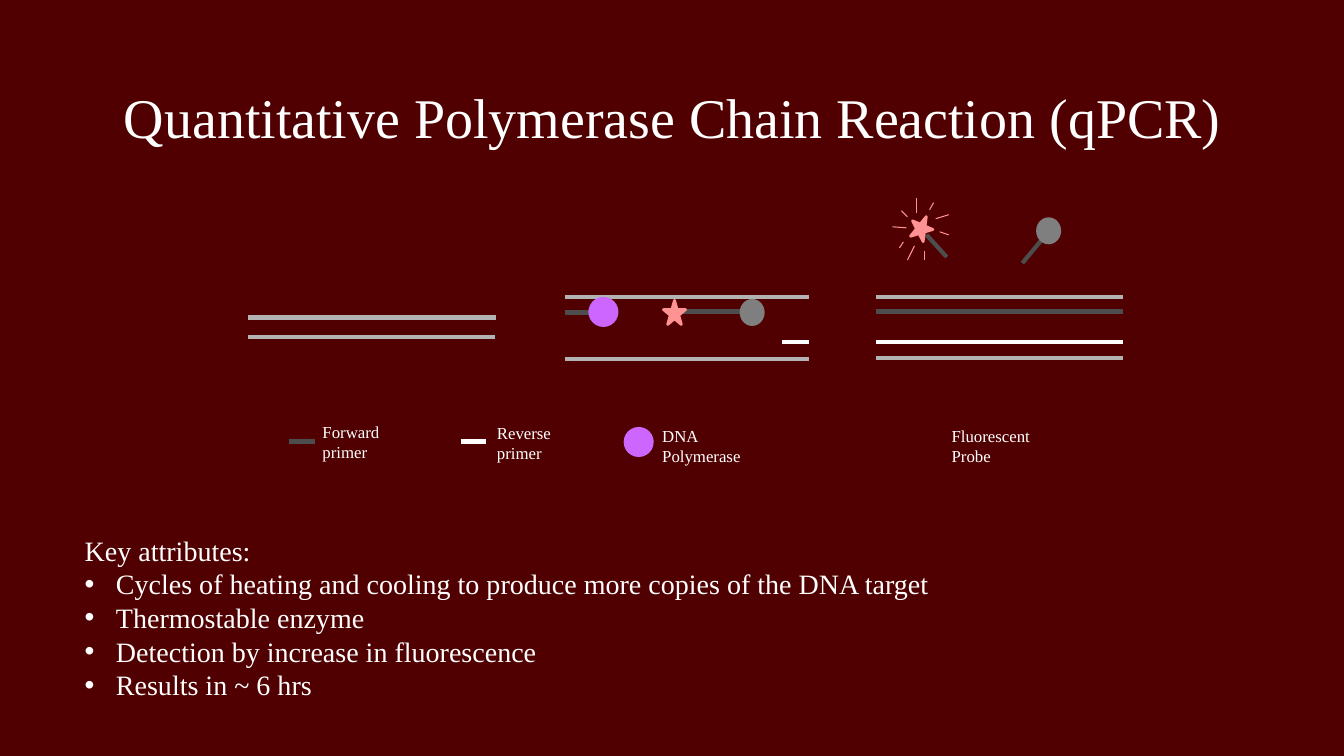
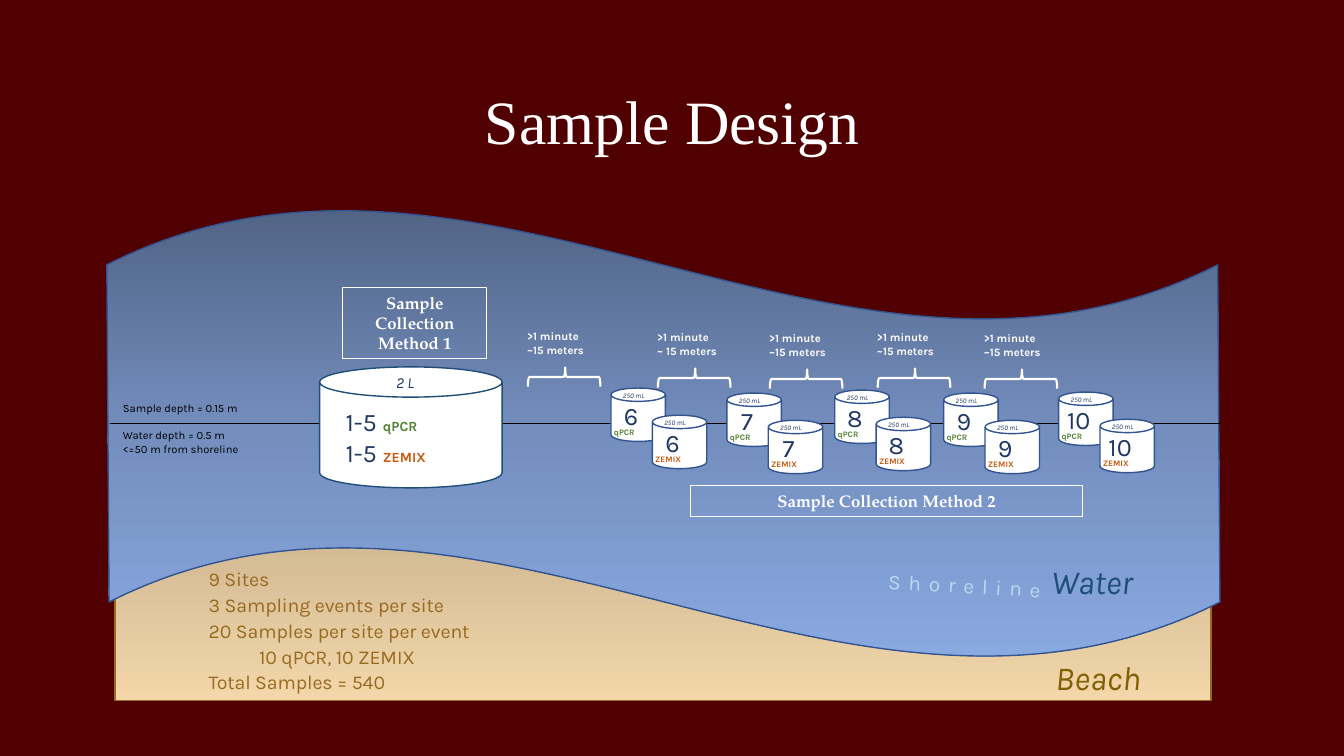
"""Build two slides on qPCR and on the design of water sampling."""
import copy

import pptx
import pptx.dml.color
import pptx.enum.shapes
import pptx.enum.text
import pptx.oxml.ns
import pptx.util
from lxml import etree

COLORS = {
    "maroon": "500000", "white": "FFFFFF", "black": "000000",
    "strand": "B3B3B3", "primer": "4D4D4D", "quencher": "7F7F7F",
    "enzyme": "CC66FF", "glow": "FF9393", "navy": "203864", "blue": "1F4E79",
    "edge": "325491", "green": "548235", "orange": "C55A11",
    "sand": "986A20", "olive": "806000", "shoreline": "BDD7EE",
}
BEACH_GRADIENT = ["907F65", "CDB590", "F3D7AA"]
WATER_GRADIENT = ["516486", "748EBE", "89A9E1"]
SERIF, SANS, BOOK = "Times New Roman", "Karla", "TeX Gyre Pagella"
SHAPES = pptx.enum.shapes.MSO_SHAPE
ALIGN = pptx.enum.text.PP_ALIGN
ANCHOR = pptx.enum.text.MSO_ANCHOR
qn = pptx.oxml.ns.qn

presentation = pptx.Presentation()
presentation.slide_width = pptx.util.Inches(13.33)
presentation.slide_height = pptx.util.Inches(7.5)
CELL = presentation.slide_height / 75


def write(shape, text, size=12, font=SERIF, color="white", bold=False, italic=False,
          align=ALIGN.LEFT, anchor=ANCHOR.TOP, indent=0, bullet=None, leading=None,
          before=0, spacing=0, join=False):
    """Add a paragraph to a shape, or a run to its last paragraph."""
    frame = shape.text_frame
    frame.word_wrap = True
    frame.auto_size = pptx.enum.text.MSO_AUTO_SIZE.NONE
    frame.vertical_anchor = anchor
    fresh = frame.text and not join
    paragraph = frame.add_paragraph() if fresh else frame.paragraphs[-1]
    if not join:
        paragraph.alignment = align
        paragraph.line_spacing = leading
        paragraph.space_before = pptx.util.Pt(before)
        properties = paragraph._p.get_or_add_pPr()
        properties.set("marL", str(int(indent * CELL)))
        properties.set("indent", str(int(-indent * CELL) if bullet else 0))
        mark = etree.SubElement(properties, qn("a:buChar" if bullet else "a:buNone"))
        if bullet:
            mark.set("char", bullet)
    run = paragraph.add_run()
    run.text = text
    run.font.name, run.font.size = font, pptx.util.Pt(size)
    run.font.bold, run.font.italic = bold, italic
    run.font.color.rgb = pptx.dml.color.RGBColor.from_string(COLORS[color])
    if spacing:
        run._r.get_or_add_rPr().set("spc", str(round(spacing * 100)))


def draw(slide, kind, box, fill=None, line=None, weight=1, rotation=0, adjust=()):
    """Draw a line, text box or preset shape whose box is given in grid cells."""
    lengths = [int(value * CELL) for value in box]
    if kind == "text":
        shape = slide.shapes.add_textbox(*lengths)
    elif kind == "line":
        shape = slide.shapes.add_connector(
            pptx.enum.shapes.MSO_CONNECTOR.STRAIGHT, *lengths)
    else:
        shape = slide.shapes.add_shape(kind, *lengths)
        shape.shadow.inherit = False
        for index, value in enumerate(adjust):
            shape.adjustments[index] = value
        if isinstance(fill, list):
            shape.fill.gradient()
            shape.fill.gradient_angle = 270
            first = shape.element.spPr.find(".//" + qn("a:gs"))
            first.addnext(copy.deepcopy(first))
            for index, stop in enumerate(shape.fill.gradient_stops):
                stop.position = index / 2
                stop.color.rgb = pptx.dml.color.RGBColor.from_string(fill[index])
        elif fill:
            shape.fill.solid()
            shape.fill.fore_color.rgb = pptx.dml.color.RGBColor.from_string(COLORS[fill])
        else:
            shape.fill.background()
    if line:
        shape.line.color.rgb = pptx.dml.color.RGBColor.from_string(COLORS[line])
        shape.line.width = pptx.util.Pt(weight)
    if kind == "line":
        etree.SubElement(shape.element.spPr, qn("a:effectLst"))
    elif rotation:
        shape.rotation = rotation
    return shape


background = presentation.slide_master.background.fill
background.solid()
background.fore_color.rgb = pptx.dml.color.RGBColor.from_string(COLORS["maroon"])

slides = []
for heading, size, body_box in [
    ("Quantitative Polymerase Chain Reaction (qPCR)", 40, (7.4, 52.4, 108.2, 17.8)),
    ("Sample Design", 44, (17.2, 55.5, 48.2, 13.8)),
]:
    slide = presentation.slides.add_slide(presentation.slide_layouts[1])
    title, body = slide.placeholders
    for placeholder, box in [(title, (6.4, 7.7, 120.6, 13)), (body, body_box)]:
        (placeholder.left, placeholder.top,
         placeholder.width, placeholder.height) = [int(value * CELL) for value in box]
    write(title, heading, size=size, align=ALIGN.CENTER)
    slides.append((slide, body))

reaction, attributes = slides[0]
write(attributes, "Key attributes:", size=20)
for attribute in [
    "Cycles of heating and cooling to produce more copies of the DNA target",
    "Thermostable enzyme",
    "Detection by increase in fluorescence",
    "Results in ~ 6 hrs",
]:
    write(attributes, attribute, size=20, indent=3.1, bullet="•")

for left, right, row, color in [
    (24.6, 49.2, 31.5, "strand"), (24.6, 49.1, 33.4, "strand"),
    (56, 80.2, 29.5, "strand"), (56, 80.2, 35.6, "strand"),
    (56, 58.5, 31, "primer"), (77.6, 80.2, 33.9, "white"),
    (67.2, 74.2, 30.9, "primer"),
    (86.9, 111.4, 29.5, "strand"), (86.9, 111.4, 35.5, "strand"),
    (86.9, 111.4, 30.9, "primer"), (86.9, 111.4, 33.9, "white"),
    (28.7, 31.2, 43.8, "primer"), (45.7, 48.2, 43.8, "white"),
]:
    draw(reaction, "line", (left, row, right, row), line=color, weight=3)

for probe_half in [(103.4, 23.7, 101.4, 26.1), (91.9, 23.3, 93.9, 25.5)]:
    draw(reaction, "line", probe_half, line="primer", weight=3)

for left, top in [(58.5, 29.6), (62, 42.5)]:
    draw(reaction, SHAPES.OVAL, (left, top, 2.7, 2.7), "enzyme", "enzyme", 2)
for left, top in [(73.5, 29.8), (102.9, 21.7)]:
    draw(reaction, SHAPES.OVAL, (left, top, 2.2, 2.4), "quencher", "quencher", 2)
for left, top, rotation in [(65.8, 29.8, 0), (90.3, 21.4, 23)]:
    draw(reaction, SHAPES.STAR_5_POINT, (left, top, 2.2, 2.4), "glow", "glow", 2, rotation)

for ray in [
    (92.2, 20.8, 92.6, 20.1), (93.2, 23, 94.1, 23.3), (91.7, 25.8, 91.7, 24.9),
    (89.2, 24.6, 89.6, 24), (89.4, 20.9, 90, 21.5), (90.9, 19.6, 90.9, 21.1),
    (94.1, 21.3, 92.8, 21.7), (90.7, 24.4, 90, 25.8), (89.9, 22.6, 88.5, 22.5),
]:
    draw(reaction, "line", ray, line="glow", weight=0.75)

for label, left, top, width in [
    ("Forward primer", 31, 41.3, 11.9), ("Reverse primer", 48.3, 41.4, 11.9),
    ("DNA Polymerase", 64.7, 41.7, 13.4), ("Fluorescent Probe", 93.4, 41.7, 13.4),
]:
    write(draw(reaction, "text", (left, top, width, 5)), label)

sampling, totals = slides[1]
draw(sampling, SHAPES.RECTANGLE, (11.4, 33.1, 108.7, 36.4), BEACH_GRADIENT, "sand")
draw(sampling, SHAPES.WAVE, (10.6, 20.7, 110.4, 44.6), WATER_GRADIENT, "edge",
     adjust=(0.125, 0.001))
draw(sampling, "line", (10.9, 42, 121.1, 42), line="black")

depths = draw(sampling, "text", (11.2, 39.3, 20.7, 6))
for text, before in [("Sample depth = 0.15 m", 0), ("Water depth = 0.5 m", 10),
                     ("<=50 m from shoreline", 0)]:
    write(depths, text, size=8, font=SANS, color="black", before=before)

METHODS = [("qPCR", "green"), ("ZEMIX", "orange")]
draw(sampling, SHAPES.CAN, (31.7, 36.4, 18.1, 12), "white", "blue")
write(draw(sampling, "text", (38.3, 36.5, 5.8, 2.9)), "2 L",
      size=11, font=SANS, color="navy", italic=True)
for index, (method, color) in enumerate(METHODS):
    label = draw(sampling, "text", (33.3, 39.8 + 3.1 * index, 15.9, 4))
    write(label, "1-5 ", size=18, font=SANS, color="navy")
    write(label, method, size=10, font=SANS, color=color, bold=True, join=True)

for number, column, row in [(6, 60.6, 38.5), (7, 72.1, 39), (8, 82.8, 38.7),
                            (9, 93.6, 39), (10, 105, 38.9)]:
    for index, (method, color) in enumerate(METHODS):
        left, top = column + 4.1 * index, row + 2.7 * index
        draw(sampling, SHAPES.CAN, (left, top, 5.4, 5.3), "white", "edge")
        write(draw(sampling, "text", (left - 1.5, top + 0.7, 7, 4)), str(number),
              size=18, font=SANS, color="navy", align=ALIGN.CENTER)
        write(draw(sampling, "text", (left - 0.7, top + 3.4, 6.2, 2)), method,
              size=6, font=SANS, color=color, bold=True)
        write(draw(sampling, "text", (left + 0.2, top - 0.2, 6.2, 1.9)), "250 mL",
              size=5, font=SANS, color="navy", italic=True)

for left, top, distance in [
    (55, 33.8, "~15 meters"), (67.9, 33.9, "~ 15 meters"), (79, 34, "~15 meters"),
    (89.7, 33.9, "~15 meters"), (100.3, 34, "~15 meters"),
]:
    draw(sampling, SHAPES.LEFT_BRACE, (left, top, 1.9, 7.2), line="white", weight=1.5,
         rotation=90, adjust=(0.083, 0.486))
    gap = draw(sampling, "text", (left - 3.7, top - 1.6, 11.6, 3.7))
    for text in [">1 minute", distance]:
        write(gap, text, size=8, font=SANS, bold=True)

for text, box in [("Sample Collection Method 1", (34, 28.5, 14.3, 7.1)),
                  ("Sample Collection Method 2", (68.5, 48.2, 38.9, 3))]:
    write(draw(sampling, SHAPES.RECTANGLE, box, line="white", weight=0.75), text,
          font=BOOK, bold=True, align=ALIGN.CENTER, anchor=ANCHOR.MIDDLE)

for text, left, top, color in [("Beach", 103.7, 64.7, "olive"),
                               ("Water", 103.3, 55.2, "blue")]:
    write(draw(sampling, "text", (left, top, 19.5, 5)), text,
          size=24, font=SANS, color=color, italic=True)
write(draw(sampling, "text", (87.1, 56.4, 20, 4), rotation=3), "Shoreline",
      size=15, font=SANS, color="shoreline", spacing=5.5)

for text, indent in [
    ("9 Sites", 2.5), ("3 Sampling events per site", 2.5),
    ("20 Samples per site per event", 2.5), ("10 qPCR, 10 ZEMIX", 7.5),
    ("Total Samples = 540", 2.5),
]:
    write(totals, text, size=14, font=SANS, color="sand", indent=indent, leading=1.1,
          spacing=-0.1)
sampling.shapes.element.append(totals.element)

presentation.save("out.pptx")
